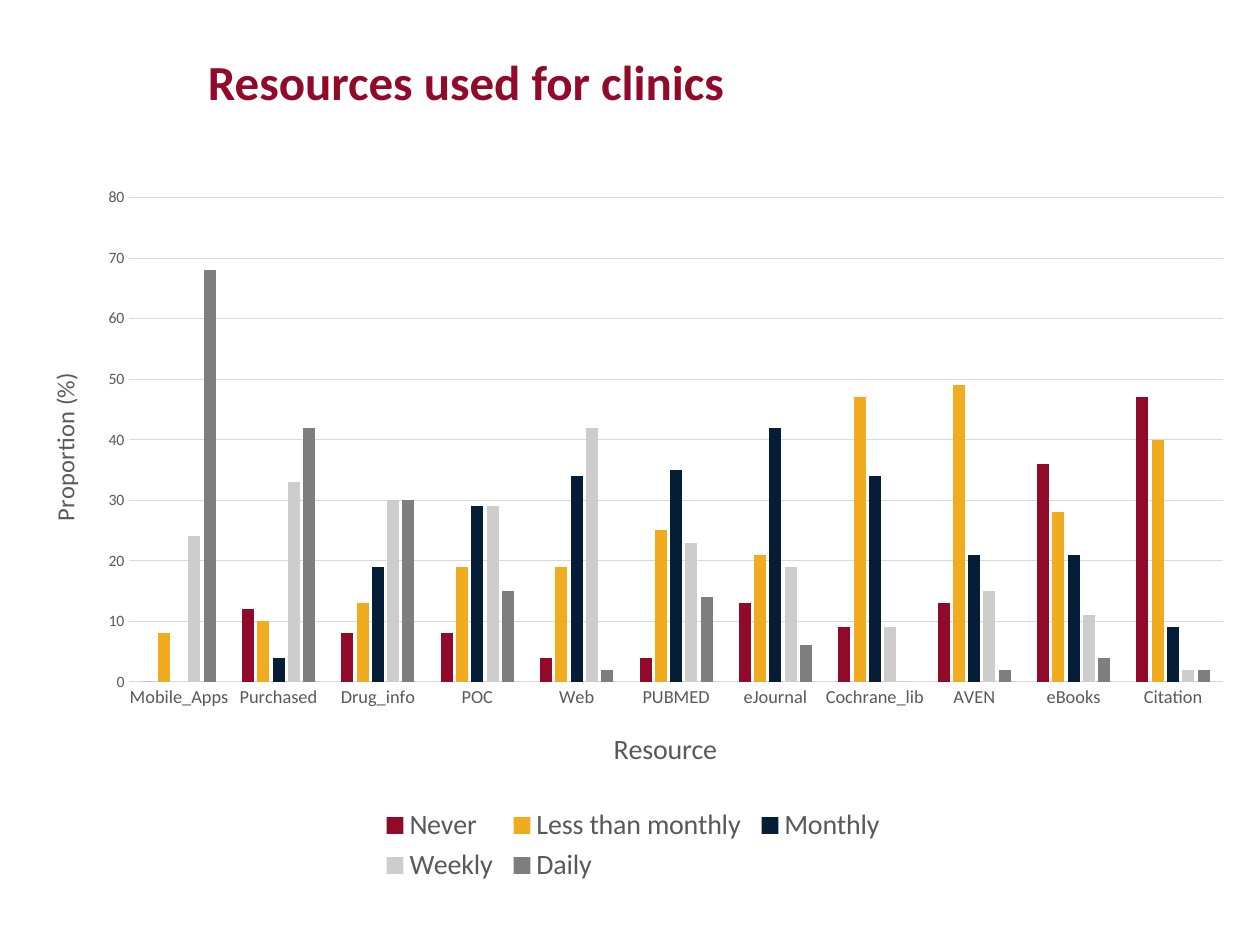
from typing import NamedTuple, Optional

from lxml import etree
from pptx import Presentation
from pptx.chart.data import CategoryChartData
from pptx.dml.color import RGBColor
from pptx.enum.chart import XL_CHART_TYPE, XL_LEGEND_POSITION, XL_TICK_MARK
from pptx.enum.text import MSO_ANCHOR
from pptx.oxml.ns import qn
from pptx.util import Inches, Pt

CLUSTERED = XL_CHART_TYPE.COLUMN_CLUSTERED
BOTTOM = XL_LEGEND_POSITION.BOTTOM
NO_TICK = XL_TICK_MARK.NONE
MIDDLE = MSO_ANCHOR.MIDDLE

FONT = "Calibri"
MAROON = "910A29"
TEXT_GREY = "595959"
RULE_GREY = "D9D9D9"


class Frequency(NamedTuple):
    name: str
    color: str
    shares: tuple[Optional[int], ...]


class Area(NamedTuple):
    x: float
    y: float
    w: Optional[float] = None
    h: Optional[float] = None


RESOURCES = ("Mobile_Apps", "Purchased", "Drug_info", "POC", "Web", "PUBMED",
             "eJournal", "Cochrane_lib", "AVEN", "eBooks", "Citation")
FREQUENCIES = (
    Frequency("Never", MAROON, (0, 12, 8, 8, 4, 4, 13, 9, 13, 36, 47)),
    Frequency("Less than monthly", "F1AB1F", (8, 10, 13, 19, 19, 25, 21, 47, 49, 28, 40)),
    Frequency("Monthly", "061D38", (None, 4, 19, 29, 34, 35, 42, 34, 21, 21, 9)),
    Frequency("Weekly", "CDCDCD", (24, 33, 30, 29, 42, 23, 19, 9, 15, 11, 2)),
    Frequency("Daily", "7E7E7E", (68, 42, 30, 15, 2, 14, 6, 0, 2, 4, 2)),
)


def rgb(color: str) -> RGBColor:
    return RGBColor.from_string(color)


def style_font(font, size: float, color: str, bold: bool = False) -> None:
    font.name = FONT
    font.size = Pt(size)
    font.bold = bold
    font.color.rgb = rgb(color)


def style_line(line) -> None:
    line.color.rgb = rgb(RULE_GREY)
    line.width = Pt(0.75)


def place(part, index: int, area: Area, inner: bool = False) -> None:
    for old in part.findall(qn("c:layout")):
        part.remove(old)
    layout = etree.Element(qn("c:layout"))
    manual = etree.SubElement(layout, qn("c:manualLayout"))
    if inner:
        etree.SubElement(manual, qn("c:layoutTarget")).set("val", "inner")
    for axis in ("x", "y"):
        etree.SubElement(manual, qn(f"c:{axis}Mode")).set("val", "edge")
    for key, value in area._asdict().items():
        if value is not None:
            etree.SubElement(manual, qn(f"c:{key}")).set("val", str(value))
    part.insert(index, layout)


def style_axis(axis, title: str, title_size: float, label_size: float, area: Area) -> None:
    axis.major_tick_mark = NO_TICK
    axis.minor_tick_mark = NO_TICK
    style_font(axis.tick_labels.font, label_size, TEXT_GREY)
    run = axis.axis_title.text_frame.paragraphs[0].add_run()
    run.text = title
    style_font(run.font, title_size, TEXT_GREY)
    place(axis.axis_title.element, 1, area)


def add_heading(slide, heading: str) -> None:
    box = slide.shapes.add_textbox(Inches(1.65), Inches(0.17), Inches(6.7), Inches(1.03))
    frame = box.text_frame
    frame.word_wrap = True
    frame.vertical_anchor = MIDDLE
    frame.margin_left = frame.margin_bottom = 0
    frame.margin_top = Inches(0.05)
    frame.margin_right = Inches(0.1)
    paragraph = frame.paragraphs[0]
    paragraph.line_spacing = Pt(24)
    run = paragraph.add_run()
    run.text = heading
    style_font(run.font, 28, MAROON, bold=True)


def add_usage_chart(slide) -> None:
    usage = CategoryChartData(number_format="0")
    usage.categories = RESOURCES
    for frequency in FREQUENCIES:
        usage.add_series(frequency.name, frequency.shares)
    chart = slide.shapes.add_chart(
        CLUSTERED, Inches(0.15), Inches(1.4), Inches(9.75), Inches(5.65), usage).chart
    chart.has_title = False
    style_font(chart.font, 10, "000000")

    plot = chart.plots[0]
    plot.gap_width = 219
    plot.overlap = -27
    plot.vary_by_categories = False
    for series, frequency in zip(plot.series, FREQUENCIES):
        series.format.fill.solid()
        series.format.fill.fore_color.rgb = rgb(frequency.color)
        series.invert_if_negative = False

    resource_axis, share_axis = chart.category_axis, chart.value_axis
    style_axis(resource_axis, "Resource", 16, 10.5, Area(0.48, 0.77))
    style_line(resource_axis.format.line)
    style_axis(share_axis, "Proportion (%)", 14, 9, Area(0.02, 0.27))
    share_axis.axis_title.element.find(".//" + qn("a:bodyPr")).set("rot", "-5400000")
    share_axis.format.line.fill.background()
    share_axis.minimum_scale = 0
    share_axis.maximum_scale = 80
    share_axis.major_unit = 10
    share_axis.has_major_gridlines = True
    style_line(share_axis.major_gridlines.format.line)

    chart.has_legend = True
    chart.legend.position = BOTTOM
    chart.legend.include_in_layout = False
    style_font(chart.legend.font, 16, TEXT_GREY)
    place(chart.element.find(".//" + qn("c:legend")), 1, Area(0.29, 0.88, 0.42, 0.12))
    place(chart.element.find(".//" + qn("c:plotArea")), 0,
          Area(0.09, 0.03, 0.89, 0.68), inner=True)


def main() -> None:
    deck = Presentation()
    deck.slide_width = Inches(10)
    deck.slide_height = Inches(7.5)
    slide = deck.slides.add_slide(deck.slide_layouts[6])
    add_heading(slide, "Resources used for clinics")
    add_usage_chart(slide)
    deck.save("out.pptx")


if __name__ == "__main__":
    main()
